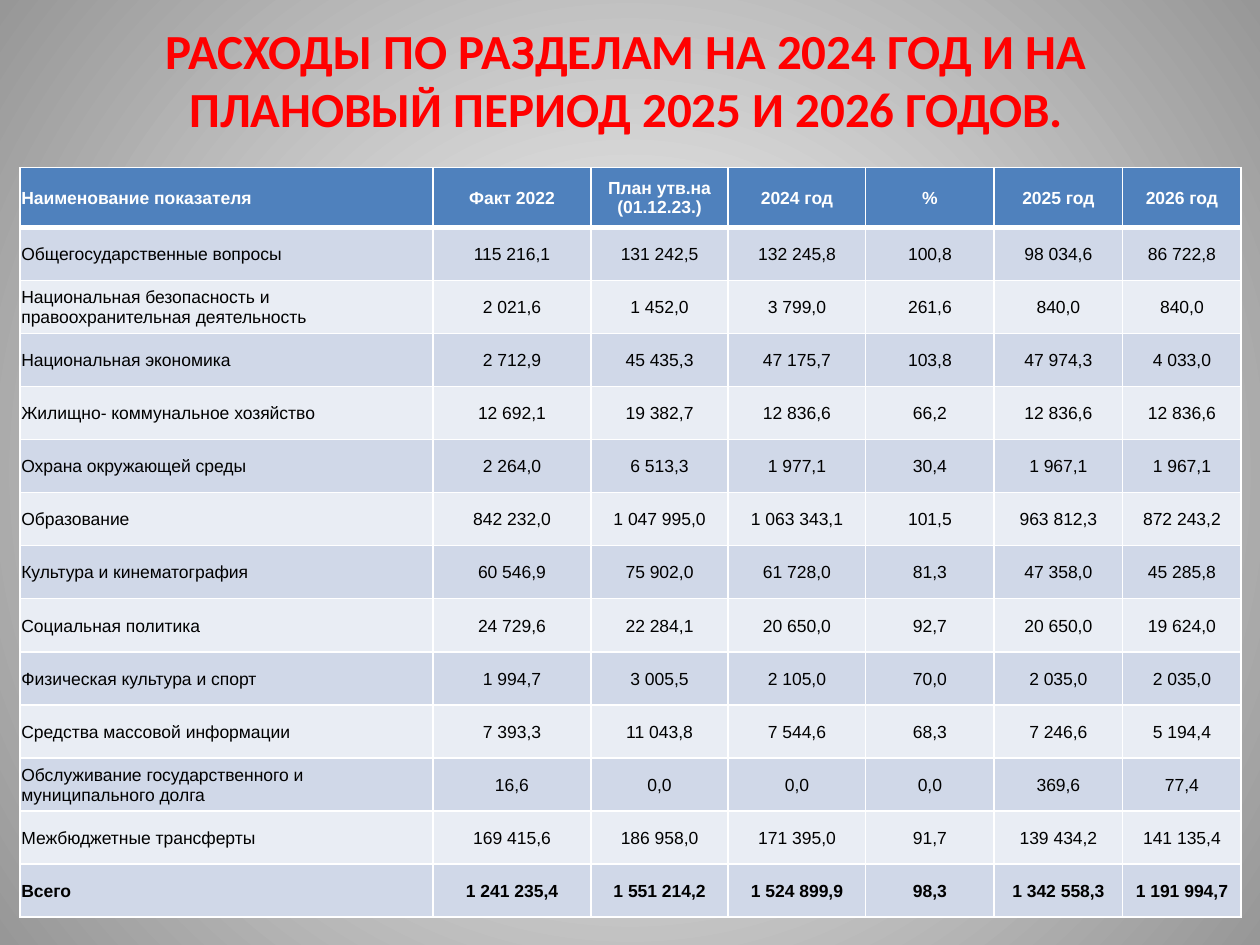
from dataclasses import dataclass

from lxml.etree import SubElement
from pptx import Presentation
from pptx.dml.color import RGBColor
from pptx.enum.text import MSO_ANCHOR, PP_ALIGN
from pptx.oxml.ns import qn
from pptx.util import Cm, Pt


@dataclass(frozen=True)
class Theme:
    title_font: str = "Calibri"
    table_font: str = "Arial"
    title_size: int = 28
    table_size: int = 10
    title: str = "FF0000"
    header_text: str = "FFFFFF"
    body_text: str = "000000"
    header_fill: str = "4F81BD"
    bands: tuple = ("D0D8E8", "E9EDF4")
    border: str = "FFFFFF"
    thin: int = 1
    thick: int = 3
    backdrop: tuple = ("FFFFFF", "979797")


THEME = Theme()
TITLE = "РАСХОДЫ ПО РАЗДЕЛАМ НА 2024 ГОД И НА ПЛАНОВЫЙ ПЕРИОД 2025 И 2026 ГОДОВ."
HEADINGS = ("Наименование показателя", "Факт 2022", "План утв.на (01.12.23.)",
            "2024 год", "%", "2025 год", "2026 год")
EXPENSES = [
    ("Общегосударственные вопросы", "115 216,1", "131 242,5", "132 245,8", "100,8", "98 034,6", "86 722,8"),
    ("Национальная безопасность и правоохранительная деятельность",
     "2 021,6", "1 452,0", "3 799,0", "261,6", "840,0", "840,0"),
    ("Национальная экономика", "2 712,9", "45 435,3", "47 175,7", "103,8", "47 974,3", "4 033,0"),
    ("Жилищно- коммунальное хозяйство", "12 692,1", "19 382,7", "12 836,6", "66,2", "12 836,6", "12 836,6"),
    ("Охрана окружающей среды", "2 264,0", "6 513,3", "1 977,1", "30,4", "1 967,1", "1 967,1"),
    ("Образование", "842 232,0", "1 047 995,0", "1 063 343,1", "101,5", "963 812,3", "872 243,2"),
    ("Культура и кинематография", "60 546,9", "75 902,0", "61 728,0", "81,3", "47 358,0", "45 285,8"),
    ("Социальная политика", "24 729,6", "22 284,1", "20 650,0", "92,7", "20 650,0", "19 624,0"),
    ("Физическая культура и спорт", "1 994,7", "3 005,5", "2 105,0", "70,0", "2 035,0", "2 035,0"),
    ("Средства массовой информации", "7 393,3", "11 043,8", "7 544,6", "68,3", "7 246,6", "5 194,4"),
    ("Обслуживание государственного и муниципального долга",
     "16,6", "0,0", "0,0", "0,0", "369,6", "77,4"),
    ("Межбюджетные трансферты", "169 415,6", "186 958,0", "171 395,0", "91,7", "139 434,2", "141 135,4"),
]
TOTAL = ("Всего", "1 241 235,4", "1 551 214,2", "1 524 899,9", "98,3", "1 342 558,3", "1 191 994,7")
COLUMN_WIDTHS = (8.33, 3.18, 2.77, 2.77, 2.59, 2.59, 2.39)
HEADER_HEIGHT, ROW_HEIGHT = 1.2, 1.07


def paint_background(slide):
    fill = slide.background.fill
    fill.gradient()
    for stop, position, color in zip(fill.gradient_stops, (0, 1), THEME.backdrop):
        stop.position = position
        stop.color.rgb = RGBColor.from_string(color)
    gradient = slide.element.find(".//" + qn("a:gradFill"))
    gradient.remove(gradient.find(qn("a:lin")))
    circle = SubElement(gradient, qn("a:path"), path="circle")
    SubElement(circle, qn("a:fillToRect"), l="50000", t="50000", r="50000", b="50000")


def format_text(frame, font_name, size, color, bold, align):
    paragraph = frame.paragraphs[0]
    paragraph.alignment = align
    font = paragraph.runs[0].font
    font.name, font.size, font.bold = font_name, Pt(size), bold
    font.color.rgb = RGBColor.from_string(color)


def draw_borders(cell, top, bottom):
    properties = cell._tc.get_or_add_tcPr()
    for side, width in (("L", THEME.thin), ("R", THEME.thin), ("T", top), ("B", bottom)):
        line = SubElement(properties, qn(f"a:ln{side}"), w=str(Pt(width)))
        SubElement(SubElement(line, qn("a:solidFill")), qn("a:srgbClr"), val=THEME.border)


def add_title(slide):
    heading = slide.shapes.add_textbox(Cm(1.19), Cm(0), Cm(22.86), Cm(3.18))
    frame = heading.text_frame
    frame.word_wrap = True
    frame.vertical_anchor = MSO_ANCHOR.MIDDLE
    frame.text = TITLE
    format_text(frame, THEME.title_font, THEME.title_size, THEME.title, True, PP_ALIGN.CENTER)


def add_expenses(slide):
    lines = [HEADINGS, *EXPENSES, TOTAL]
    heights = [HEADER_HEIGHT] + [ROW_HEIGHT] * (len(lines) - 1)
    expenses = slide.shapes.add_table(
        len(lines), len(HEADINGS), Cm(0.4), Cm(3.38), Cm(sum(COLUMN_WIDTHS)), Cm(sum(heights))
    ).table
    expenses.horz_banding = False
    for column, width in zip(expenses.columns, COLUMN_WIDTHS):
        column.width = Cm(width)
    for row, (line, height) in enumerate(zip(lines, heights)):
        expenses.rows[row].height = Cm(height)
        is_header = row == 0
        fill = THEME.header_fill if is_header else THEME.bands[(row - 1) % 2]
        color = THEME.header_text if is_header else THEME.body_text
        top = THEME.thick if row == 1 else THEME.thin
        bottom = THEME.thick if is_header else THEME.thin
        for column, value in enumerate(line):
            cell = expenses.cell(row, column)
            cell.text_frame.text = value
            cell.vertical_anchor = MSO_ANCHOR.MIDDLE
            cell.margin_left = cell.margin_right = cell.margin_top = Cm(0.03)
            cell.margin_bottom = Cm(0)
            draw_borders(cell, top, bottom)
            cell.fill.solid()
            cell.fill.fore_color.rgb = RGBColor.from_string(fill)
            format_text(cell.text_frame, THEME.table_font, THEME.table_size, color,
                        line in (HEADINGS, TOTAL), PP_ALIGN.CENTER if column else PP_ALIGN.LEFT)


def main():
    """Build the slide of budget expenses by section."""
    presentation = Presentation()
    presentation.slide_width, presentation.slide_height = Cm(25.4), Cm(19.05)
    slide = presentation.slides.add_slide(presentation.slide_layouts[6])
    paint_background(slide)
    add_title(slide)
    add_expenses(slide)
    presentation.save("out.pptx")


if __name__ == "__main__":
    main()
